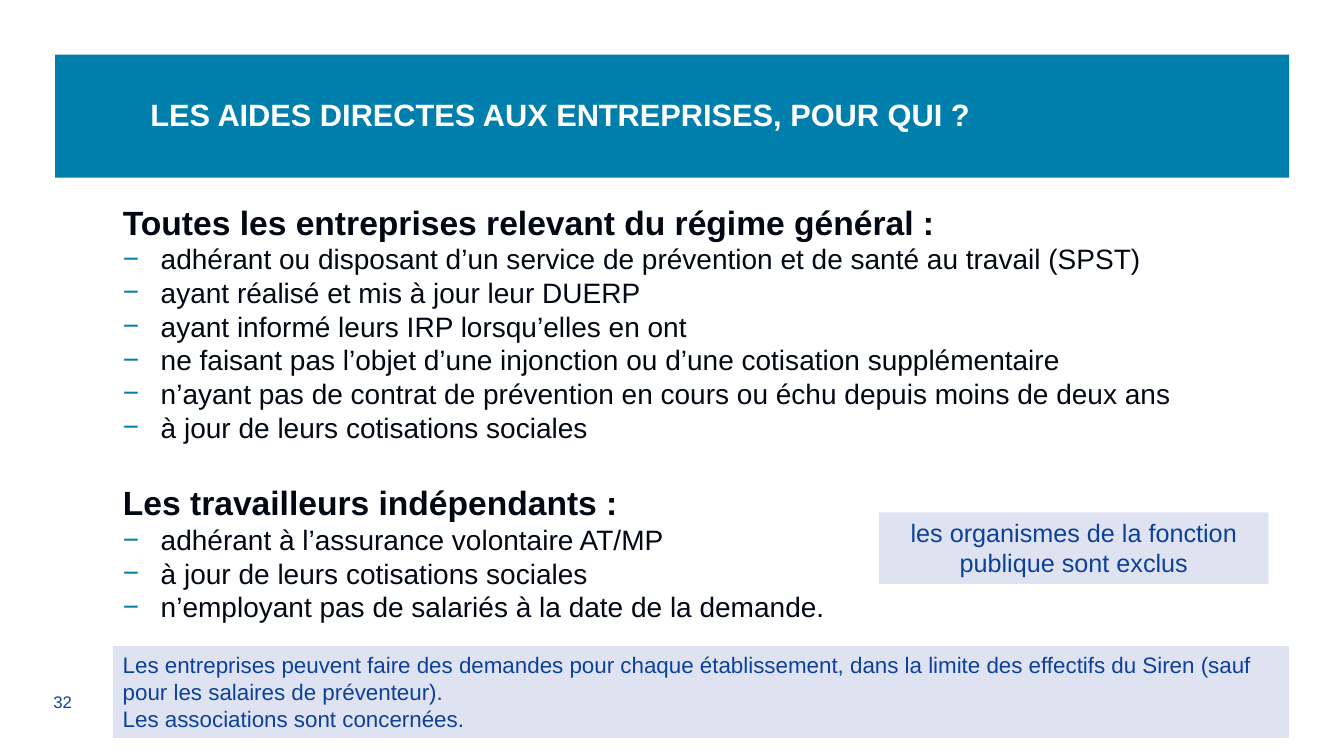
from dataclasses import dataclass

from lxml.etree import SubElement
from pptx import Presentation
from pptx.dml.color import RGBColor
from pptx.enum.shapes import MSO_SHAPE
from pptx.enum.text import MSO_ANCHOR, MSO_AUTO_SIZE, PP_ALIGN
from pptx.oxml.ns import qn
from pptx.util import Pt


@dataclass(frozen=True)
class Theme:
    font: str = "Arial"
    banner: str = "007FAD"
    panel: str = "DFE3F1"
    white: str = "FFFFFF"
    dark: str = "010813"
    accent: str = "0C419A"
    title_size: int = 22
    heading_size: int = 24
    item_size: int = 20
    callout_size: int = 18
    note_size: int = 16
    number_size: int = 12


THEME = Theme()

SECTIONS = [
    ("Toutes les entreprises relevant du régime général :", [
        "adhérant ou disposant d’un service de prévention et de santé au travail (SPST)",
        "ayant réalisé et mis à jour leur DUERP",
        "ayant informé leurs IRP lorsqu’elles en ont",
        "ne faisant pas l’objet d’une injonction ou d’une cotisation supplémentaire",
        "n’ayant pas de contrat de prévention en cours ou échu depuis moins de deux ans",
        "à jour de leurs cotisations sociales",
    ]),
    ("Les travailleurs indépendants :", [
        "adhérant à l’assurance volontaire AT/MP",
        "à jour de leurs cotisations sociales",
        "n’employant pas de salariés à la date de la demande.",
    ]),
]
NOTES = [
    "Les entreprises peuvent faire des demandes pour chaque établissement, "
    "dans la limite des effectifs du Siren (sauf pour les salaires de préventeur).",
    "Les associations sont concernées.",
]


def place(shape, box):
    shape.left, shape.top, shape.width, shape.height = (Pt(length) for length in box)


def fill_shape(shape, color):
    shape.fill.solid()
    shape.fill.fore_color.rgb = RGBColor.from_string(color)


def style_paragraph(paragraph, size, color, bold=False, alignment=PP_ALIGN.LEFT):
    paragraph.alignment = alignment
    font = paragraph.font
    font.name = THEME.font
    font.size = Pt(size)
    font.bold = bold
    font.color.rgb = RGBColor.from_string(color)


def set_bullet(paragraph, character=None, indent=0):
    """Give the paragraph a hanging bullet, or none if no character is given."""
    properties = paragraph._p.get_or_add_pPr()
    properties.set("marL", str(Pt(indent)))
    properties.set("indent", str(-Pt(indent)))
    if character is None:
        SubElement(properties, qn("a:buNone"))
        return
    color = SubElement(properties, qn("a:buClr"))
    SubElement(color, qn("a:srgbClr"), val=THEME.banner)
    SubElement(properties, qn("a:buFont"), typeface=THEME.font)
    SubElement(properties, qn("a:buChar"), char=character)


def paragraphs_for(frame, texts):
    """Yield one paragraph per text, starting with the frame's first one."""
    for position, text in enumerate(texts):
        paragraph = frame.add_paragraph() if position else frame.paragraphs[0]
        paragraph.text = text
        yield paragraph


def add_banner(slide, box):
    title = slide.shapes.title
    place(title, box)
    fill_shape(title, THEME.banner)
    frame = title.text_frame
    frame.auto_size = MSO_AUTO_SIZE.NONE
    frame.vertical_anchor = MSO_ANCHOR.MIDDLE
    frame.margin_left = Pt(68)
    frame.text = "LES AIDES DIRECTES AUX ENTREPRISES, POUR QUI ?"
    paragraph = frame.paragraphs[0]
    paragraph.line_spacing = 0.9
    style_paragraph(paragraph, THEME.title_size, THEME.white, bold=True)


def add_conditions(slide, box):
    body = slide.placeholders[1]
    place(body, box)
    frame = body.text_frame
    frame.auto_size = MSO_AUTO_SIZE.NONE
    rows = [(text, text == heading)
            for heading, items in SECTIONS for text in (heading, *items)]
    paragraphs = paragraphs_for(frame, [text for text, _ in rows])
    for position, (paragraph, (_, is_heading)) in enumerate(zip(paragraphs, rows)):
        if is_heading:
            set_bullet(paragraph)
        else:
            set_bullet(paragraph, "−", 27)
        paragraph.space_before = Pt(27.6 if is_heading and position else 0)
        size = THEME.heading_size if is_heading else THEME.item_size
        style_paragraph(paragraph, size, THEME.dark, bold=is_heading)


def add_panel(slide, box, texts, size, alignment=PP_ALIGN.LEFT):
    panel = slide.shapes.add_shape(MSO_SHAPE.RECTANGLE, *(Pt(length) for length in box))
    panel.shadow.inherit = False
    fill_shape(panel, THEME.panel)
    panel.line.fill.background()
    frame = panel.text_frame
    frame.word_wrap = True
    frame.vertical_anchor = MSO_ANCHOR.TOP
    for paragraph in paragraphs_for(frame, texts):
        style_paragraph(paragraph, size, THEME.accent, alignment=alignment)


def add_slide_number(slide, box, number):
    frame = slide.shapes.add_textbox(*(Pt(length) for length in box)).text_frame
    frame.word_wrap = True
    frame.vertical_anchor = MSO_ANCHOR.MIDDLE
    frame.text = str(number)
    style_paragraph(frame.paragraphs[0], THEME.number_size, THEME.accent)


def main():
    presentation = Presentation()
    presentation.slide_width, presentation.slide_height = Pt(960), Pt(540)
    slide = presentation.slides.add_slide(presentation.slide_layouts[1])
    add_slide_number(slide, (31, 490.5, 57, 22), 32)
    add_banner(slide, (39.4, 39, 881.4, 88))
    add_conditions(slide, (80.6, 140.4, 811.4, 342))
    add_panel(slide, (80.6, 461.5, 840.2, 65.5), NOTES, THEME.note_size)
    add_panel(slide, (628, 366, 278, 51), ["les organismes de la fonction publique sont exclus"],
              THEME.callout_size, PP_ALIGN.CENTER)
    presentation.save("out.pptx")


if __name__ == "__main__":
    main()
